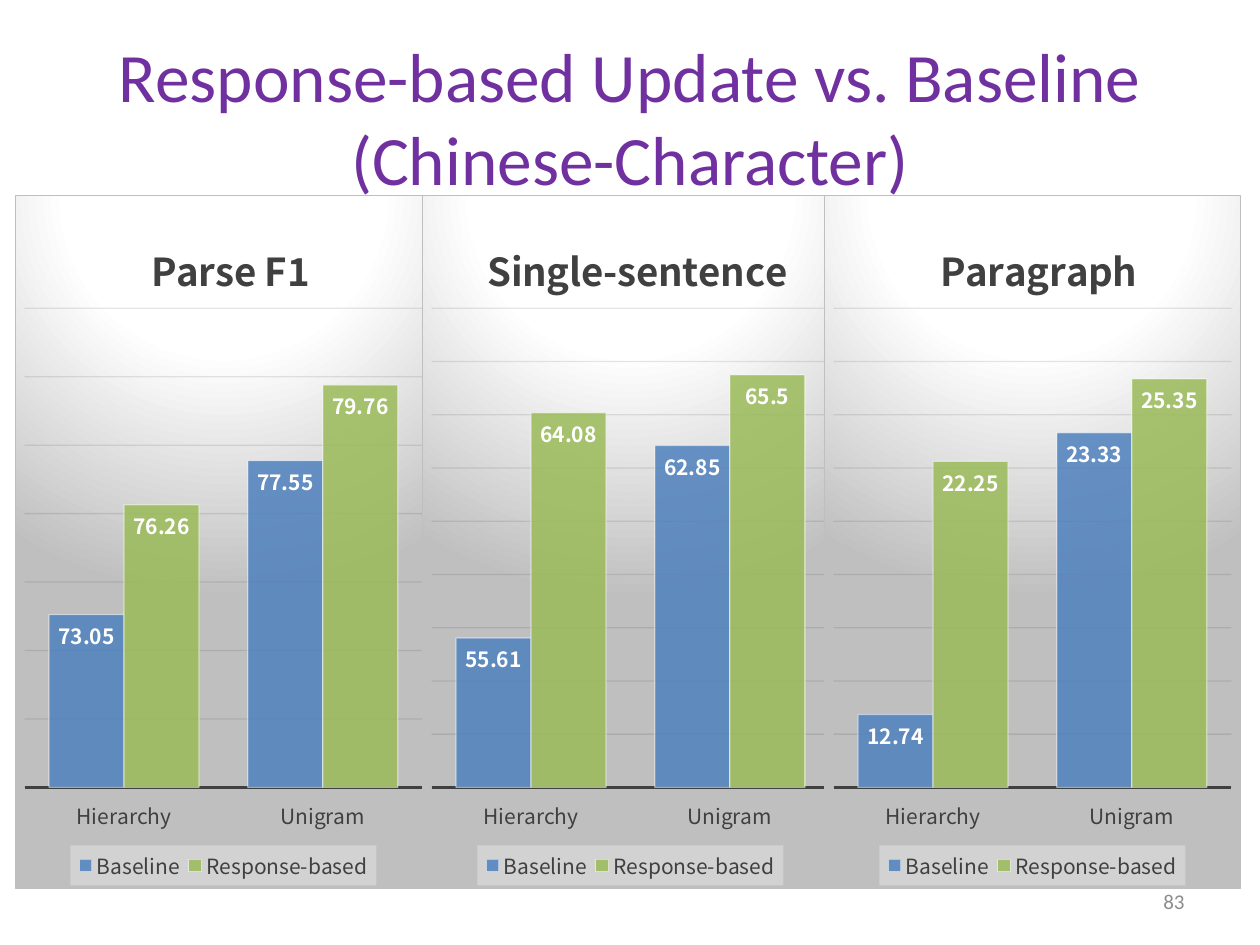
from lxml.etree import SubElement
from pptx import Presentation
from pptx.chart.data import CategoryChartData
from pptx.dml.color import RGBColor
from pptx.enum.chart import (XL_CHART_TYPE, XL_LABEL_POSITION, XL_LEGEND_POSITION,
                             XL_TICK_LABEL_POSITION, XL_TICK_MARK)
from pptx.enum.text import MSO_ANCHOR, PP_ALIGN
from pptx.oxml import parse_xml
from pptx.oxml.ns import nsdecls, qn
from pptx.util import Pt

PX = 914400 // 126
COLORS = {"title": "7030A0", "number": "8C8C8C", "text": "404040", "white": "FFFFFF",
          "grid": "0D0D0D", "border": "BFBFBF", "legend": "F2F2F2",
          "Baseline": "4F81BD", "Response-based": "9BBB59"}
RGB = {name: RGBColor.from_string(value) for name, value in COLORS.items()}
CHART_FONT = "Noto Sans CJK KR"
CHART_W, CHART_H = 417, 694


def set_alpha(fill, percent):
    """Make a solid fill partly transparent."""
    clr = fill._xPr.find(qn("a:solidFill"))[0]
    SubElement(clr, qn("a:alpha"), val=str(percent * 1000))


def set_layout(parent, index, x, y, w=None, h=None, inner=False):
    """Place a chart part by px measured from the chart's corner."""
    for old in parent.findall(qn("c:layout")):
        parent.remove(old)
    layout = parse_xml(f"<c:layout {nsdecls('c')}><c:manualLayout/></c:layout>")
    if inner:
        SubElement(layout[0], qn("c:layoutTarget"), val="inner")
    for tag in ("xMode", "yMode"):
        SubElement(layout[0], qn("c:" + tag), val="edge")
    for tag, value, full in (("x", x, CHART_W), ("y", y, CHART_H),
                             ("w", w, CHART_W), ("h", h, CHART_H)):
        if value is not None:
            SubElement(layout[0], qn("c:" + tag), val=f"{value / full:.4f}")
    parent.insert(index, layout)


prs = Presentation()
prs.slide_width, prs.slide_height = 1260 * PX, 945 * PX
s = prs.slides.add_slide(prs.slide_layouts[6])

# Title and slide number
texts = [
    ("Response-based Update vs. Baseline\v(Chinese-Character)",
     (63, 38, 1134, 157), 39.6, "title", PP_ALIGN.CENTER),
    ("83", (903, 876, 294, 50), 12, "number", PP_ALIGN.RIGHT),
]
for text, box, size, color, align in texts:
    tf = s.shapes.add_textbox(*(v * PX for v in box)).text_frame
    tf.word_wrap = True
    tf.vertical_anchor = MSO_ANCHOR.MIDDLE
    p = tf.paragraphs[0]
    p.text = text
    p.alignment = align
    for r in p.runs:
        r.font.name, r.font.size = "Calibri", Pt(size)
        r.font.color.rgb = RGB[color]

# Charts: name, left, title offset, axis minimum and maximum, values
charts = [
    ("Parse F1", 15, 129, 68, 82, [(73.05, 77.55), (76.26, 79.76)]),
    ("Single-sentence", 422, 58, 50, 68, [(55.61, 62.85), (64.08, 65.5)]),
    ("Paragraph", 824, 109, 10, 28, [(12.74, 23.33), (22.25, 25.35)]),
]
for name, left, title_x, low, high, values in charts:
    data = CategoryChartData()
    data.categories = ["Hierarchy", "Unigram"]
    for series_name, vals in zip(("Baseline", "Response-based"), values):
        data.add_series(series_name, vals)
    chart = s.shapes.add_chart(XL_CHART_TYPE.COLUMN_CLUSTERED, left * PX, 195 * PX,
                               CHART_W * PX, CHART_H * PX, data).chart
    chart.font.name, chart.font.size = CHART_FONT, Pt(12)
    chart.font.color.rgb = RGB["text"]

    # Chart background and border
    space = chart._chartSpace
    space.find(qn("c:chart")).addnext(parse_xml(
        f"<c:spPr {nsdecls('c', 'a')}><a:gradFill><a:gsLst>"
        f'<a:gs pos="0"><a:srgbClr val="{COLORS["white"]}"/></a:gs>'
        f'<a:gs pos="39000"><a:srgbClr val="{COLORS["white"]}"/></a:gs>'
        f'<a:gs pos="100000"><a:srgbClr val="{COLORS["border"]}"/></a:gs></a:gsLst>'
        '<a:path path="circle"><a:fillToRect l="50000" t="-80000" r="50000" b="180000"/>'
        '</a:path></a:gradFill><a:ln w="9525"><a:solidFill>'
        f'<a:srgbClr val="{COLORS["border"]}"/></a:solidFill></a:ln></c:spPr>'))
    space.find(qn("c:date1904")).addnext(
        parse_xml(f'<c:roundedCorners {nsdecls("c")} val="0"/>'))

    # Chart title
    chart.has_title = True
    p = chart.chart_title.text_frame.paragraphs[0]
    p.text = name
    font = p.runs[0].font
    font.name, font.size, font.bold = CHART_FONT, Pt(22), True
    font.color.rgb = RGB["text"]
    set_layout(chart.chart_title._element, 1, title_x, 35)

    # Axes
    axis = chart.category_axis
    axis.major_tick_mark = XL_TICK_MARK.NONE
    axis.tick_label_position = XL_TICK_LABEL_POSITION.LOW
    axis.format.line.color.rgb = RGB["text"]
    axis.format.line.width = Pt(1.5)
    axis = chart.value_axis
    axis.minimum_scale, axis.maximum_scale, axis.major_unit = low, high, 2
    axis.has_major_gridlines = True
    line = axis.major_gridlines.format.line
    line.color.rgb, line.width = RGB["grid"], Pt(0.75)
    set_alpha(line.fill, 10)
    axis.visible = False
    set_layout(space.find(".//" + qn("c:plotArea")), 0, 9, 113, 399, 480, inner=True)

    # Columns and value labels
    plot = chart.plots[0]
    plot.gap_width, plot.overlap, plot.vary_by_categories = 65, 0, False
    for series in plot.series:
        fill, line = series.format.fill, series.format.line
        fill.solid()
        fill.fore_color.rgb = RGB[series.name]
        set_alpha(fill, 85)
        line.color.rgb, line.width = RGB["white"], Pt(0.75)
        set_alpha(line.fill, 50)
        labels = series.data_labels
        labels.show_value = True
        labels.position = XL_LABEL_POSITION.INSIDE_END
        labels.font.name, labels.font.size, labels.font.bold = CHART_FONT, Pt(12), True
        labels.font.color.rgb = RGB["white"]

    # Legend
    chart.has_legend = True
    legend = chart.legend
    legend.position = XL_LEGEND_POSITION.BOTTOM
    legend.include_in_layout = False
    legend.font.name, legend.font.size = CHART_FONT, Pt(12)
    legend.font.color.rgb = RGB["text"]
    set_layout(legend._element, 1, 55, 654, 307, 40)
    legend._element.find(qn("c:txPr")).addprevious(parse_xml(
        f"<c:spPr {nsdecls('c', 'a')}><a:solidFill><a:srgbClr val=\"{COLORS['legend']}\">"
        '<a:alpha val="39000"/></a:srgbClr></a:solidFill></c:spPr>'))

prs.save("out.pptx")
